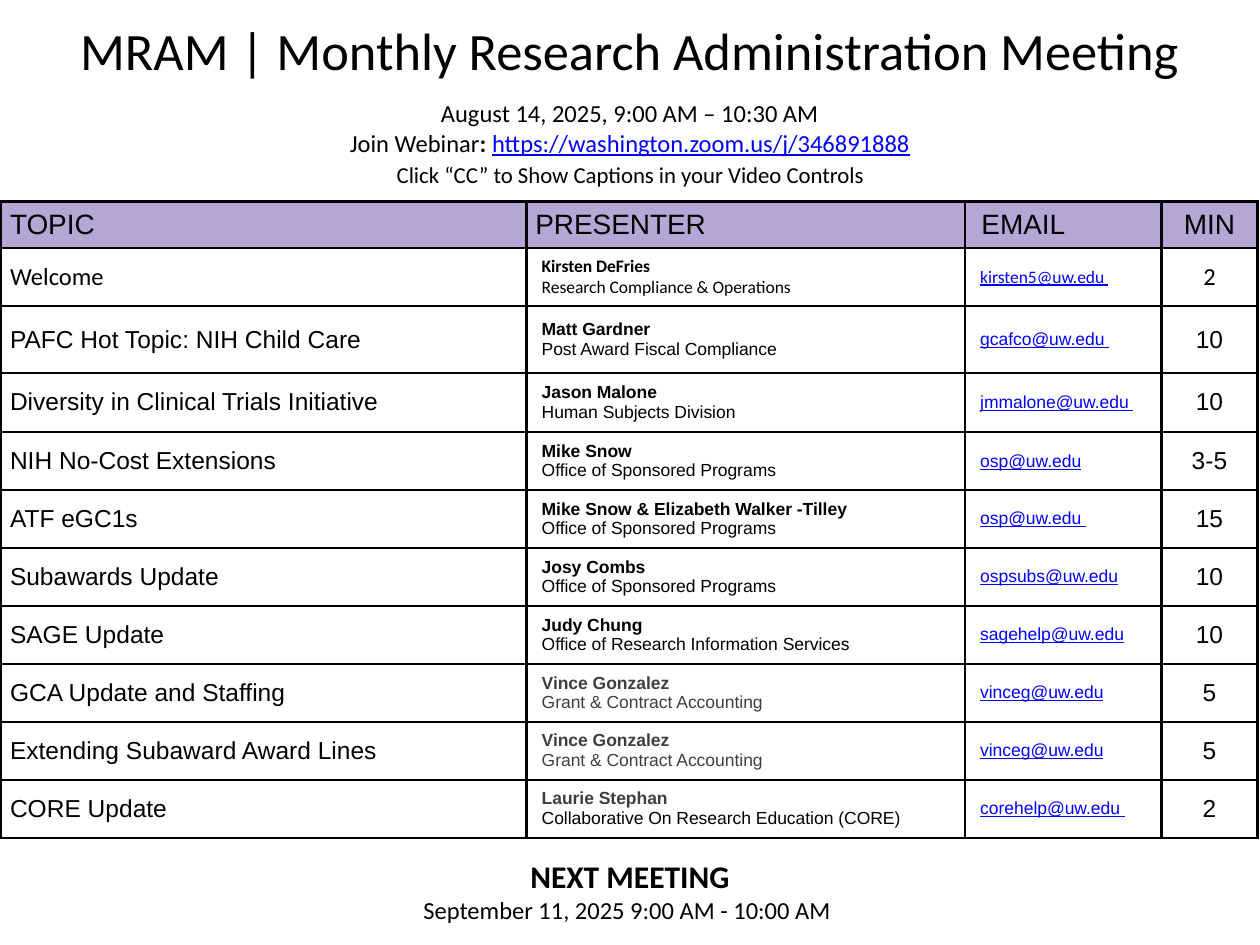
from lxml import etree
from pptx import Presentation
from pptx.dml.color import RGBColor
from pptx.enum import text
from pptx.oxml import ns
from pptx.util import Inches, Pt

BLACK, GRAY, BLUE, WHITE, PURPLE = "000000", "3F3F3F", "0000FF", "FFFFFF", "B4A7D6"
TITLE = "MRAM | Monthly Research Administration Meeting"
HEADERS = ["TOPIC", "PRESENTER", "EMAIL", "MIN"]
OSP = "Office of Sponsored Programs"
GCA = "Grant & Contract Accounting"
AGENDA = [
    ("Welcome", "Kirsten DeFries", "Research Compliance & Operations", "kirsten5@uw.edu ", "2"),
    ("PAFC Hot Topic: NIH Child Care", "Matt Gardner", "Post Award Fiscal Compliance", "gcafco@uw.edu ", "10"),
    ("Diversity in Clinical Trials Initiative", "Jason Malone", "Human Subjects Division", "jmmalone@uw.edu ", "10"),
    ("NIH No-Cost Extensions", "Mike Snow", OSP, "osp@uw.edu", "3-5"),
    ("ATF eGC1s", "Mike Snow & Elizabeth Walker -Tilley", OSP, "osp@uw.edu ", "15"),
    ("Subawards Update", "Josy Combs", OSP, "ospsubs@uw.edu", "10"),
    ("SAGE Update", "Judy Chung", "Office of Research Information Services", "sagehelp@uw.edu", "10"),
    ("GCA Update and Staffing", "Vince Gonzalez", GCA, "vinceg@uw.edu", "5"),
    ("Extending Subaward Award Lines", "Vince Gonzalez", GCA, "vinceg@uw.edu", "5"),
    ("CORE Update", "Laurie Stephan", "Collaborative On Research Education (CORE)", "corehelp@uw.edu ", "2"),
]
GRAY_NAMES = {"Vince Gonzalez", "Laurie Stephan"}
GRAY_OFFICES = {GCA}
COL_WIDTHS = [4.17, 3.48, 1.56, 0.76]
ROW_HEIGHTS = [0.37, 0.46, 0.53, 0.47] + [0.46] * 7
MARGINS = [(0.07, 0.07), (0.12, 0.12), (0.12, 0.12), (0.07, 0.07)]
HEADER_MARGINS = [(0.07, 0.07), (0.07, 0.07), (0.13, 0.07), (0.07, 0.07)]


def style(font, size, name="Calibri", color=BLACK, bold=False, underline=False):
    font.size, font.name = Pt(size), name
    font.bold, font.underline = bold, underline
    font.color.rgb = RGBColor.from_string(color)


def set_frame(tf):
    tf.word_wrap = True
    tf.auto_size = text.MSO_AUTO_SIZE.NONE
    tf.vertical_anchor = text.MSO_ANCHOR.TOP
    tf.margin_left = tf.margin_right = tf.margin_top = tf.margin_bottom = Inches(0.1)


def add_lines(slide, box, lines):
    tf = slide.shapes.add_textbox(*map(Inches, box)).text_frame
    set_frame(tf)
    for i, (runs, size, spacing) in enumerate(lines):
        p = tf.paragraphs[0] if i == 0 else tf.add_paragraph()
        p.alignment = text.PP_ALIGN.CENTER
        p.line_spacing = spacing
        for words, look in runs:
            r = p.add_run()
            r.text = words
            style(r.font, size, **look)


def add_borders(cell):
    tcPr = cell._tc.get_or_add_tcPr()
    for i, side in enumerate(("lnL", "lnR", "lnT", "lnB")):
        ln = etree.Element(ns.qn("a:" + side), w=str(Pt(1.5)))
        fill = etree.SubElement(ln, ns.qn("a:solidFill"))
        etree.SubElement(fill, ns.qn("a:srgbClr"), val=BLACK)
        tcPr.insert(i, ln)


def fill_cell(cell, lines, margins, fill, centered):
    cell.fill.solid()
    cell.fill.fore_color.rgb = RGBColor.from_string(fill)
    add_borders(cell)
    cell.vertical_anchor = text.MSO_ANCHOR.MIDDLE
    cell.margin_left, cell.margin_right = map(Inches, margins)
    cell.margin_top = cell.margin_bottom = 0
    tf = cell.text_frame
    for i, (words, look) in enumerate(lines):
        p = tf.paragraphs[0] if i == 0 else tf.add_paragraph()
        p.alignment = text.PP_ALIGN.CENTER if centered else text.PP_ALIGN.LEFT
        r = p.add_run()
        r.text = words
        style(r.font, **look)


def agenda_cells(row, font):
    topic, name, office, email, minutes = row
    large, small = dict(size=14, name=font), dict(size=10, name=font)
    name_color = GRAY if name in GRAY_NAMES else BLACK
    office_color = GRAY if office in GRAY_OFFICES else BLACK
    return [
        [(topic, large)],
        [(name, dict(small, bold=True, color=name_color)), (office, dict(small, color=office_color))],
        [(email, dict(small, color=BLUE, underline=True))],
        [(minutes, large)],
    ]


def add_agenda(slide):
    rows = [[[(h, dict(size=16, name="Arial"))] for h in HEADERS]]
    rows += [agenda_cells(row, "Calibri" if i == 0 else "Arial") for i, row in enumerate(AGENDA)]
    box = (0.01, 1.6, sum(COL_WIDTHS), sum(ROW_HEIGHTS))
    table = slide.shapes.add_table(len(rows), len(HEADERS), *map(Inches, box)).table
    table.first_row = table.horz_banding = False
    for col, width in zip(table.columns, COL_WIDTHS):
        col.width = Inches(width)
    for i, (cells, height) in enumerate(zip(rows, ROW_HEIGHTS)):
        table.rows[i].height = Inches(height)
        margins, fill = (HEADER_MARGINS, PURPLE) if i == 0 else (MARGINS, WHITE)
        for j, lines in enumerate(cells):
            fill_cell(table.cell(i, j), lines, margins[j], fill, j == 3)


def main():
    prs = Presentation()
    prs.slide_width, prs.slide_height = Inches(10), Inches(7.5)
    slide = prs.slides.add_slide(prs.slide_layouts[5])
    title = slide.shapes.title
    title.left, title.top, title.width, title.height = map(Inches, (0.01, 0.04, 9.98, 0.82))
    title.text_frame.text = TITLE
    set_frame(title.text_frame)
    p = title.text_frame.paragraphs[0]
    p.alignment = text.PP_ALIGN.CENTER
    style(p.runs[0].font, 30)

    add_agenda(slide)
    add_lines(slide, (0, 0.68, 10, 1), [
        ([("August 14, 2025, 9:00 AM – 10:30 AM", {})], 14, 1.0),
        ([("Join Webinar", {}), (": ", dict(bold=True)),
          ("https://washington.zoom.us/j/346891888", dict(color=BLUE, underline=True))], 14, 1.0),
        ([("Click “CC” to Show Captions in your Video Controls", {})], 13, 1.15),
    ])
    add_lines(slide, (0.01, 6.7, 9.98, 0.88), [
        ([("NEXT MEETING", dict(bold=True))], 18, 1.0),
        ([("September 11, 2025 9:00 AM - 10:00 AM ", {})], 14, 1.0),
    ])
    prs.save("out.pptx")


if __name__ == "__main__":
    main()
